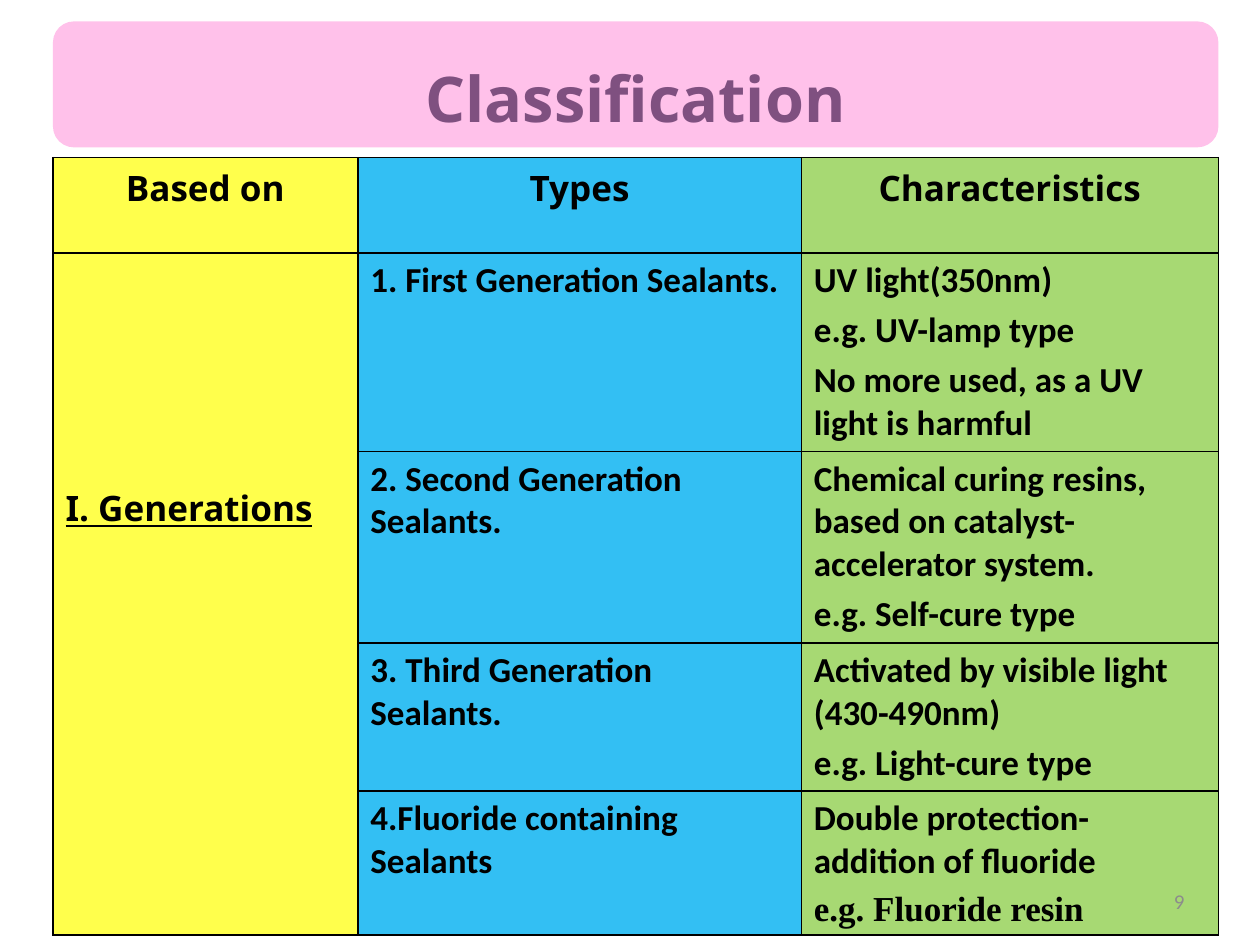
"""Builds a classification slide for dental sealants by generation."""
from lxml import etree
from pptx import Presentation
from pptx import util as u
from pptx.dml.color import RGBColor
from pptx.enum import shapes, text
from pptx.oxml.ns import qn

TITLE = "Classification"
HEADINGS = ["Based on", "Types", "Characteristics"]
BASIS = "I. Generations"
GENERATIONS = [
    ("1. First Generation Sealants.",
     ["UV light(350nm)", "e.g. UV-lamp type", "No more used, as a UV light is harmful"]),
    ("2. Second Generation Sealants.",
     ["Chemical curing resins, based on catalyst-accelerator system.", "e.g. Self-cure type"]),
    ("3. Third Generation Sealants.",
     ["Activated by visible light (430-490nm)", "e.g. Light-cure type"]),
    ("4.Fluoride containing Sealants",
     ["Double protection-addition of fluoride", "e.g. Fluoride resin"]),
]
PAGE = "9"

THEME = {
    "title_fill": ("FF66CC", 40), "title": "7F5080", "ink": "000000", "page": "8C8C8C",
    "columns": [("FFFF00", 70), ("00B0F0", 80), ("92D050", 80)],
    "display": "Noto Sans", "body": "Calibri", "serif": "Times New Roman",
    "title_size": 36, "size": 20, "page_size": 12, "gap": 4,
}
COLUMNS = [2.42, 3.52, 3.31]
ROWS = [0.76, 1.57, 1.52, 1.17, 1.14]
LEFT, TITLE_TOP, TITLE_HEIGHT, GRID_TOP = 0.42, 0.17, 1, 1.25
BASIS_INSET = 1.83
WIDTH, HEIGHT = sum(COLUMNS), sum(ROWS)


def write(frame, lines, font=THEME["body"], size=THEME["size"], color=THEME["ink"],
          bold=True, underline=None, align=text.PP_ALIGN.LEFT, last_font=None):
    """Put lines of text, one a paragraph, in a text frame."""
    frame.word_wrap = True
    for i, line in enumerate(lines):
        paragraph = frame.paragraphs[0] if i == 0 else frame.add_paragraph()
        paragraph.alignment = align
        if i:
            paragraph.space_before = u.Pt(THEME["gap"])
        run = paragraph.add_run()
        run.text = line
        last = i == len(lines) - 1
        run.font.name = last_font if last and last_font else font
        run.font.size = u.Pt(size)
        run.font.bold = bold
        run.font.underline = underline
        run.font.color.rgb = RGBColor.from_string(color)


def paint(fill, holder, color, opacity):
    """Fill a shape or cell with a partly transparent colour."""
    fill.solid()
    fill.fore_color.rgb = RGBColor.from_string(color)
    tint = holder.find(qn("a:solidFill")).find(qn("a:srgbClr"))
    etree.SubElement(tint, qn("a:alpha"), val=str(opacity * 1000))


def outline(cell):
    """Draw all four borders of a cell."""
    properties = cell._tc.get_or_add_tcPr()
    for i, side in enumerate(("lnL", "lnR", "lnT", "lnB")):
        border = etree.Element(qn(f"a:{side}"), w=str(u.Pt(1)))
        ink = etree.SubElement(border, qn("a:solidFill"))
        etree.SubElement(ink, qn("a:srgbClr"), val=THEME["ink"])
        properties.insert(i, border)


def add_title(slide):
    """Add the rounded title banner."""
    banner = slide.shapes.add_shape(
        shapes.MSO_SHAPE.ROUNDED_RECTANGLE,
        *map(u.Inches, (LEFT, TITLE_TOP, WIDTH, TITLE_HEIGHT)))
    banner.shadow.inherit = False
    banner.line.fill.background()
    paint(banner.fill, banner._element.spPr, *THEME["title_fill"])
    banner.text_frame.vertical_anchor = text.MSO_ANCHOR.BOTTOM
    write(banner.text_frame, [TITLE], font=THEME["display"], size=THEME["title_size"],
          color=THEME["title"], align=text.PP_ALIGN.CENTER)


def add_classes(slide):
    """Add the table of generations."""
    grid = slide.shapes.add_table(
        len(ROWS), len(COLUMNS),
        *map(u.Inches, (LEFT, GRID_TOP, WIDTH, HEIGHT))).table
    for column, width in zip(grid.columns, COLUMNS):
        column.width = u.Inches(width)
    for row, height in zip(grid.rows, ROWS):
        row.height = u.Inches(height)
        for cell, tint in zip(row.cells, THEME["columns"]):
            paint(cell.fill, cell._tc.get_or_add_tcPr(), *tint)
            outline(cell)

    for c, heading in enumerate(HEADINGS):
        write(grid.cell(0, c).text_frame, [heading], font=THEME["display"],
              align=text.PP_ALIGN.CENTER)
    basis = grid.cell(1, 0)
    basis.merge(grid.cell(len(GENERATIONS), 0))
    basis.margin_top = u.Inches(BASIS_INSET)
    write(basis.text_frame, [BASIS], font=THEME["display"], underline=True)
    for r, (kind, traits) in enumerate(GENERATIONS, 1):
        write(grid.cell(r, 1).text_frame, [kind])
        write(grid.cell(r, 2).text_frame, traits,
              last_font=THEME["serif"] if r == len(GENERATIONS) else None)


def add_page(slide):
    """Add the page number."""
    page = slide.shapes.add_textbox(*map(u.Inches, (7.17, 6.95, 2.33, 0.4))).text_frame
    page.vertical_anchor = text.MSO_ANCHOR.MIDDLE
    write(page, [PAGE], size=THEME["page_size"], color=THEME["page"], bold=False,
          align=text.PP_ALIGN.RIGHT)


def main():
    """Build and save the slide."""
    deck = Presentation()
    deck.slide_width, deck.slide_height = u.Inches(10), u.Inches(7.5)
    slide = deck.slides.add_slide(deck.slide_layouts[6])
    add_title(slide)
    add_classes(slide)
    add_page(slide)
    deck.save("out.pptx")


if __name__ == "__main__":
    main()
